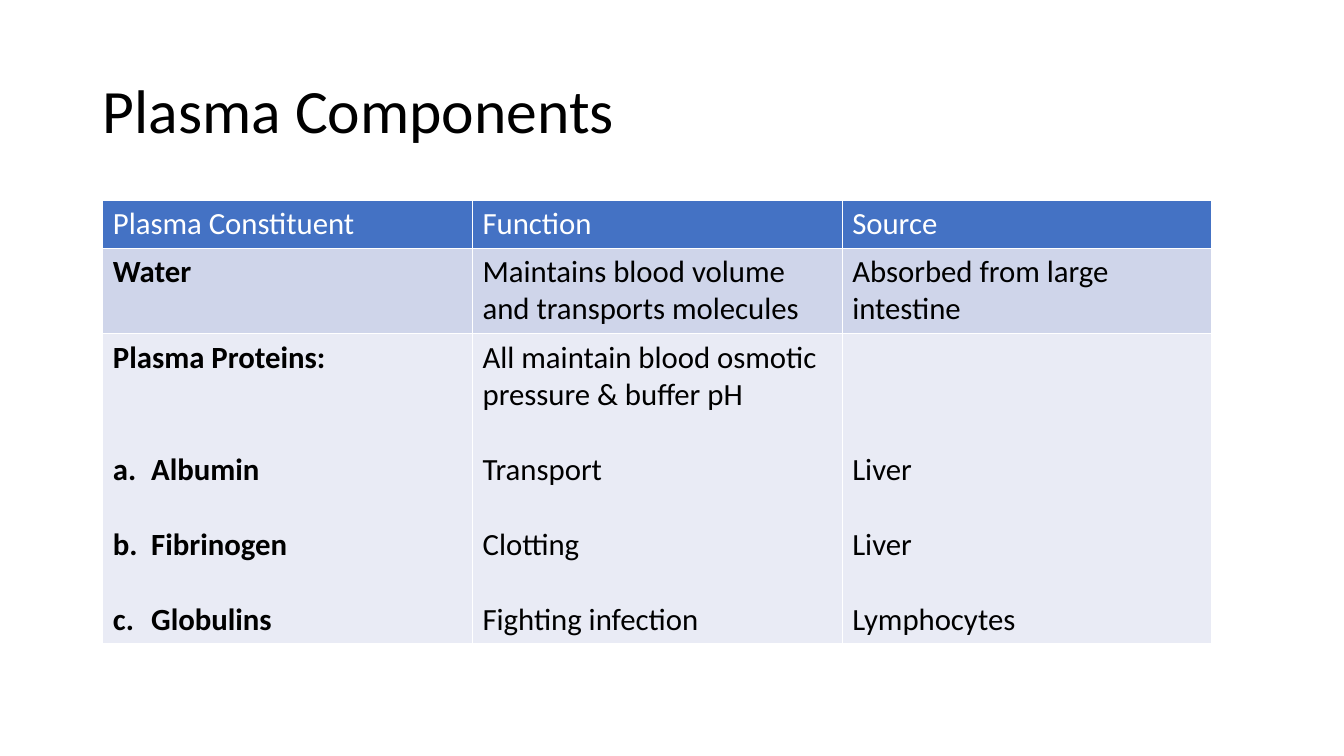
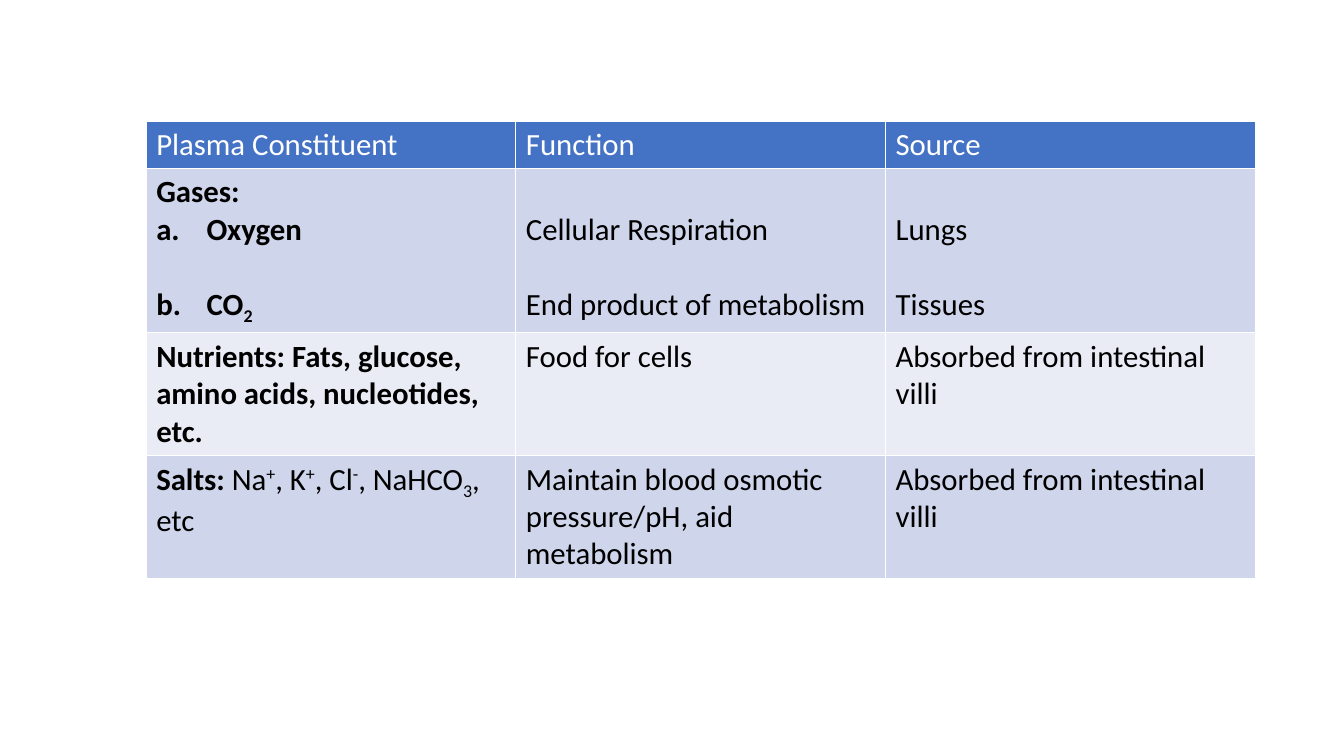
from lxml import etree
from pptx import Presentation
from pptx import util as u
from pptx.dml.color import RGBColor
from pptx.enum import text
from pptx.oxml import ns

FONT = "Calibri"
BLACK, WHITE = "000000", "FFFFFF"
HEADER_FILL, BANDS = "4472C4", ["CFD5EA", "E9EBF5"]
LINE = 26.8
PLAIN, BOLD, SUB, SUPER = (False, 0), (True, 0), (False, -25000), (False, 30000)
BOLD_SUB = (True, -25000)
HEADINGS = ["Plasma Constituent", "Function", "Source"]


def paint(target, color):
    target.solid()
    target.fore_color.rgb = RGBColor.from_string(color)


def add_span(para, words, style, size, color):
    span = para.add_run()
    span.text = words
    span.font.name, span.font.size = FONT, u.Pt(size)
    span.font.bold = style[0]
    paint(span.font.fill, color)
    if style[1]:
        span.font._element.set("baseline", str(style[1]))


deck = Presentation()
deck.slide_width, deck.slide_height = u.Inches(13.33), u.Inches(7.5)

# Each paragraph: blank lines above, whether lettered, spans of (words, style)
pages = [
    {
        "title": "Plasma Components", "left": 1.02, "top": 1.99, "hang": 0.38,
        "heights": [0.46, 0.85, 3.07],
        "rows": [
            [
                [(0, False, [("Water", BOLD)])],
                [(0, False, [("Maintains blood volume and transports molecules", PLAIN)])],
                [(0, False, [("Absorbed from large intestine", PLAIN)])],
            ],
            [
                [
                    (0, False, [("Plasma Proteins:", BOLD)]),
                    (2, True, [("Albumin", BOLD)]),
                    (1, True, [("Fibrinogen", BOLD)]),
                    (1, True, [("Globulins", BOLD)]),
                ],
                [
                    (0, False, [("All maintain blood osmotic pressure & buffer pH", PLAIN)]),
                    (1, False, [("Transport", PLAIN)]),
                    (1, False, [("Clotting", PLAIN)]),
                    (1, False, [("Fighting infection", PLAIN)]),
                ],
                [
                    (3, False, [("Liver", PLAIN)]),
                    (1, False, [("Liver", PLAIN)]),
                    (1, False, [("Lymphocytes", PLAIN)]),
                ],
            ],
        ],
    },
    {
        "title": None, "left": 1.45, "top": 1.2, "hang": 0.5,
        "heights": [0.46, 1.63, 1.22, 1.22],
        "rows": [
            [
                [
                    (0, False, [("Gases:", BOLD)]),
                    (0, True, [("Oxygen", BOLD)]),
                    (1, True, [("CO", BOLD), ("2", BOLD_SUB)]),
                ],
                [
                    (1, False, [("Cellular Respiration", PLAIN)]),
                    (1, False, [("End product of metabolism", PLAIN)]),
                ],
                [(1, False, [("Lungs", PLAIN)]), (1, False, [("Tissues", PLAIN)])],
            ],
            [
                [(0, False, [("Nutrients: Fats, glucose, amino acids, nucleotides, etc.", BOLD)])],
                [(0, False, [("Food for cells", PLAIN)])],
                [(0, False, [("Absorbed from intestinal villi", PLAIN)])],
            ],
            [
                [(0, False, [
                    ("Salts:", BOLD), (" Na", PLAIN), ("+", SUPER), (", K", PLAIN),
                    ("+", SUPER), (", Cl", PLAIN), ("-", SUPER), (", NaHCO", PLAIN),
                    ("3", SUB), (", etc", PLAIN),
                ])],
                [(0, False, [("Maintain blood osmotic pressure/pH, aid metabolism", PLAIN)])],
                [(0, False, [("Absorbed from intestinal villi", PLAIN)])],
            ],
        ],
    },
]

for content in pages:
    page = deck.slides.add_slide(deck.slide_layouts[5 if content["title"] else 6])
    if content["title"]:
        box = page.shapes.title
        box.left, box.top = u.Inches(0.92), u.Inches(0.4)
        box.width, box.height = u.Inches(11.5), u.Inches(1.45)
        box.text_frame.vertical_anchor = text.MSO_ANCHOR.MIDDLE
        box.text_frame.auto_size = text.MSO_AUTO_SIZE.NONE
        para = box.text_frame.paragraphs[0]
        para.alignment, para.line_spacing = text.PP_ALIGN.LEFT, 0.9
        add_span(para, content["title"], PLAIN, 44, BLACK)

    header = [[(0, False, [(heading, PLAIN)])] for heading in HEADINGS]
    rows = [header] + content["rows"]
    table = page.shapes.add_table(
        len(rows), len(HEADINGS), u.Inches(content["left"]), u.Inches(content["top"]),
        u.Inches(11), u.Inches(sum(content["heights"]))).table
    for row_index, row in enumerate(rows):
        table.rows[row_index].height = u.Inches(content["heights"][row_index])
        fill = BANDS[(row_index - 1) % 2] if row_index else HEADER_FILL
        color = BLACK if row_index else WHITE
        for column_index, paragraphs in enumerate(row):
            cell = table.cell(row_index, column_index)
            properties = cell._tc.get_or_add_tcPr()
            for side in ("lnL", "lnR", "lnT", "lnB"):
                border = etree.SubElement(properties, ns.qn("a:" + side), w=str(u.Pt(1)))
                solid = etree.SubElement(border, ns.qn("a:solidFill"))
                etree.SubElement(solid, ns.qn("a:srgbClr"), val=WHITE)
            paint(cell.fill, fill)
            cell.margin_top = u.Inches(0.05) + u.Pt(LINE * paragraphs[0][0])
            for index, (gap, lettered, spans) in enumerate(paragraphs):
                frame = cell.text_frame
                para = frame.add_paragraph() if index else frame.paragraphs[0]
                if index and gap:
                    para.space_before = u.Pt(LINE * gap)
                if lettered:
                    format_node = para._p.get_or_add_pPr()
                    format_node.set("marL", str(u.Inches(content["hang"])))
                    format_node.set("indent", str(-u.Inches(content["hang"])))
                    etree.SubElement(format_node, ns.qn("a:buFont"), typeface="+mj-lt")
                    etree.SubElement(format_node, ns.qn("a:buAutoNum"), type="alphaLcPeriod")
                for words, style in spans:
                    add_span(para, words, style, 22, color)

deck.save("out.pptx")
